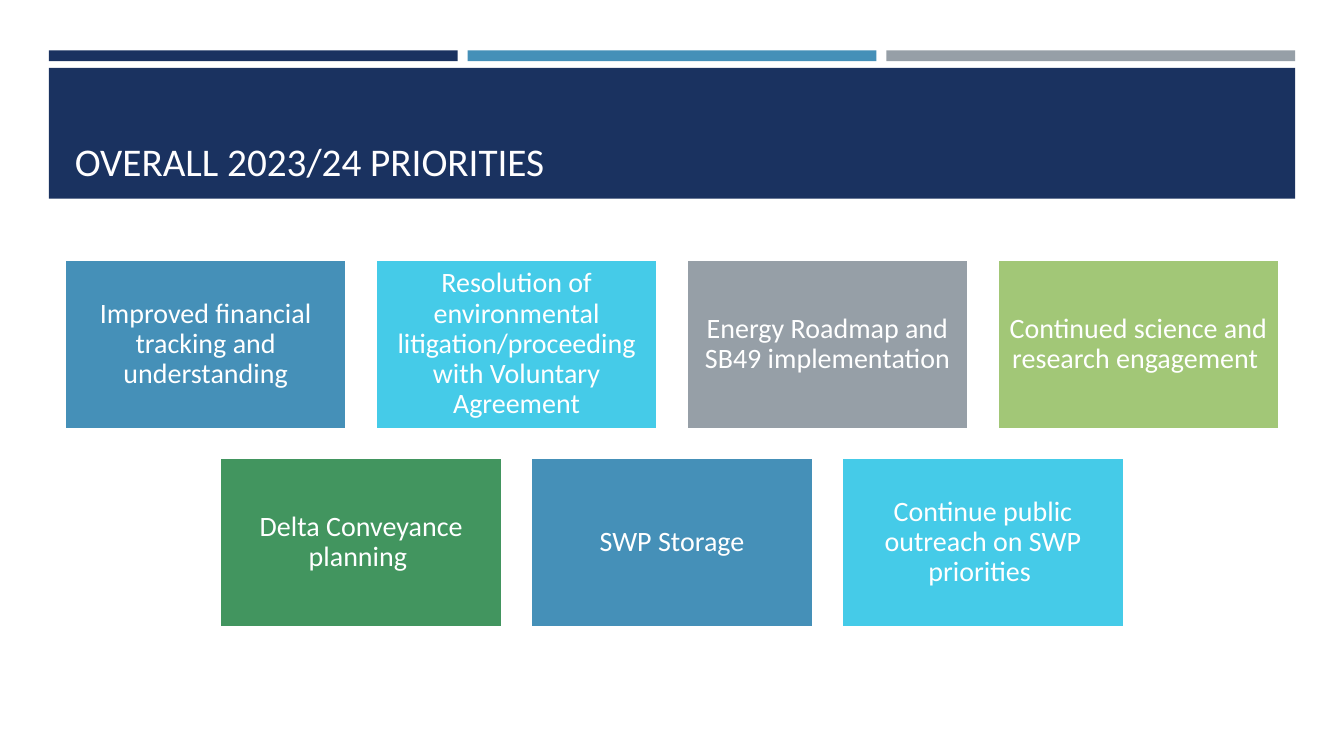
from pptx import Presentation
from pptx.dml.color import RGBColor
from pptx.enum.shapes import MSO_SHAPE
from pptx.enum.text import MSO_ANCHOR, PP_ALIGN
from pptx.util import Cm, Pt

RECTANGLE = MSO_SHAPE.RECTANGLE
MIDDLE, BOTTOM = MSO_ANCHOR.MIDDLE, MSO_ANCHOR.BOTTOM
LEFT, CENTER = PP_ALIGN.LEFT, PP_ALIGN.CENTER

NAVY = RGBColor(0x1A, 0x32, 0x60)
BLUE = RGBColor(0x45, 0x90, 0xB8)
CYAN = RGBColor(0x45, 0xCB, 0xE8)
GRAY = RGBColor(0x96, 0x9F, 0xA7)
LIME = RGBColor(0xA2, 0xC7, 0x77)
GREEN = RGBColor(0x42, 0x95, 0x5F)
WHITE = RGBColor(0xFF, 0xFF, 0xFF)
TITLE_WHITE = RGBColor(0xFF, 0xFE, 0xFF)

FONT = "Calibri"
PRIORITY_ROWS = [
    [
        ("Improved financial tracking and understanding", BLUE),
        ("Resolution of environmental litigation/proceeding with Voluntary Agreement", CYAN),
        ("Energy Roadmap and SB49 implementation", GRAY),
        ("Continued science and research engagement ", LIME),
    ],
    [
        ("Delta Conveyance planning ", GREEN),
        ("SWP Storage", BLUE),
        ("Continue public outreach on SWP priorities ", CYAN),
    ],
]


def add_block(slide, left, top, width, height, color):
    block = slide.shapes.add_shape(RECTANGLE, left, top, width, height)
    block.shadow.inherit = False
    block.fill.solid()
    block.fill.fore_color.rgb = color
    block.line.fill.background()
    return block


def write(paragraph, words, size, color, alignment):
    paragraph.alignment = alignment
    paragraph.line_spacing = 0.9
    run = paragraph.add_run()
    run.text = words
    run.font.name = FONT
    run.font.size = Pt(size)
    run.font.color.rgb = color


def add_accent_bars(slide, left, top, width, height):
    gap = Cm(0.25)
    bar_width = (width - 2 * gap) // 3
    for column, color in enumerate((NAVY, BLUE, GRAY)):
        add_block(slide, left + column * (bar_width + gap), top, bar_width, height, color)


def add_title_band(slide, left, top, width, height):
    add_block(slide, left, top, width, height, NAVY)
    title = slide.shapes.title
    title.element.getparent().append(title.element)
    title.left, title.top = left + Cm(0.4), top + Cm(0.25)
    title.width, title.height = width - Cm(0.8), height - Cm(0.48)
    title.text_frame.vertical_anchor = BOTTOM
    title.text_frame.word_wrap = True
    write(title.text_frame.paragraphs[0], "OVERALL 2023/24 PRIORITIES", 28, TITLE_WHITE, LEFT)


def add_priority_card(slide, left, top, width, height, words, color):
    card = add_block(slide, left, top, width, height, color)
    card.line.color.rgb = WHITE
    card.line.width = Pt(1.75)
    frame = card.text_frame
    frame.word_wrap = True
    frame.vertical_anchor = MIDDLE
    frame.margin_left = frame.margin_right = Cm(0.2)
    frame.margin_top = frame.margin_bottom = Cm(0.2)
    write(frame.paragraphs[0], words, 20, WHITE, CENTER)


def add_priorities(slide, left, top, width, height):
    gap = Cm(0.73)
    columns = max(len(row) for row in PRIORITY_ROWS)
    card_width = (width - (columns - 1) * gap) // columns
    card_height = (height - gap) // len(PRIORITY_ROWS)
    for row_number, row in enumerate(PRIORITY_ROWS):
        row_width = len(row) * (card_width + gap) - gap
        row_left = left + (width - row_width) // 2
        row_top = top + row_number * (card_height + gap)
        for column, (words, color) in enumerate(row):
            card_left = row_left + column * (card_width + gap)
            add_priority_card(slide, card_left, row_top, card_width, card_height, words, color)


def main():
    deck = Presentation()
    deck.slide_width, deck.slide_height = Cm(33.87), Cm(19.05)
    slide = deck.slides.add_slide(deck.slide_layouts[5])
    add_accent_bars(slide, Cm(1.23), Cm(1.27), Cm(31.41), Cm(0.27))
    add_title_band(slide, Cm(1.23), Cm(1.71), Cm(31.41), Cm(3.3))
    add_priorities(slide, Cm(1.63), Cm(6.54), Cm(30.61), Cm(9.27))
    deck.save("out.pptx")


if __name__ == "__main__":
    main()
